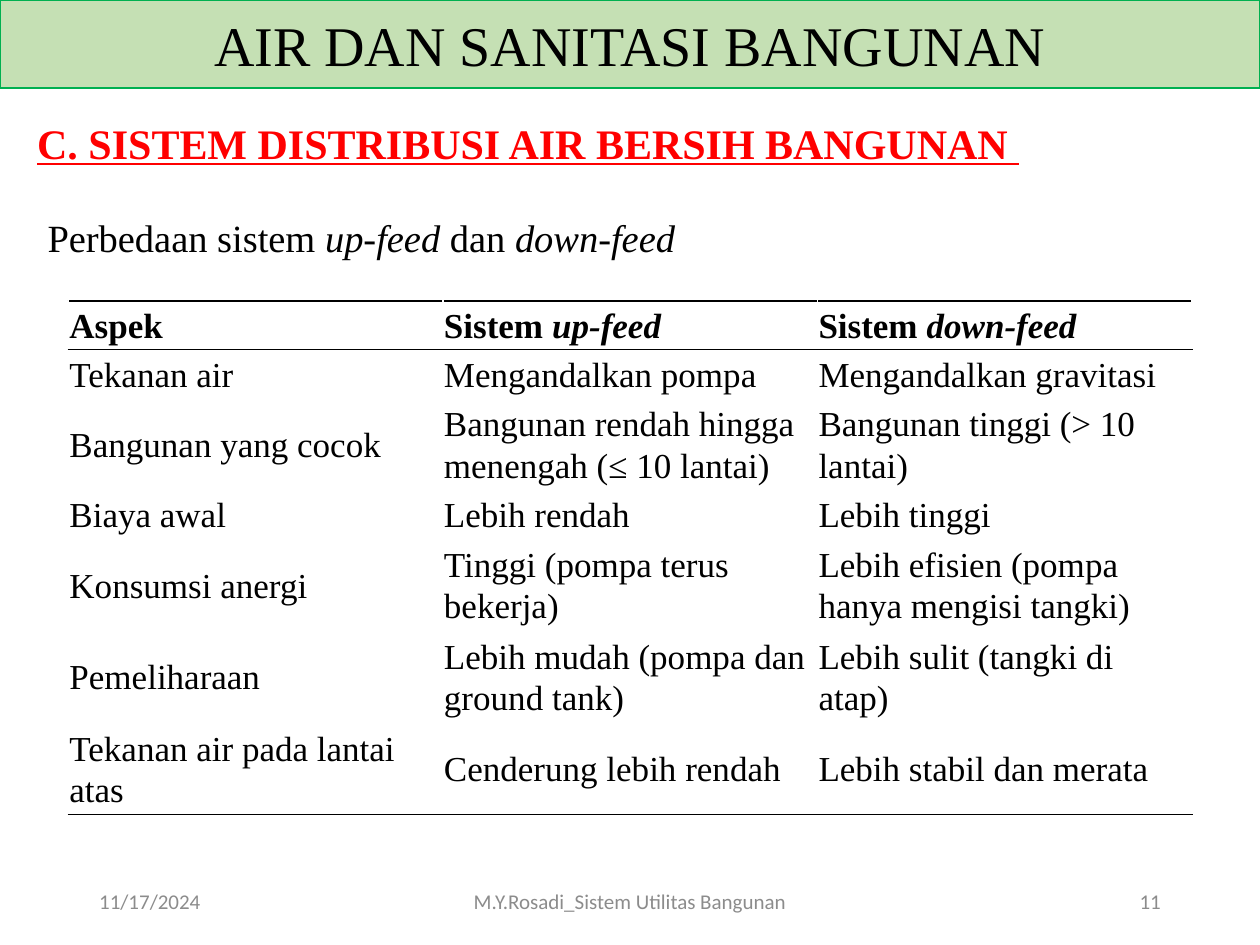
from lxml.etree import SubElement
from pptx import Presentation
from pptx.dml.color import RGBColor
from pptx.enum.shapes import MSO_SHAPE
from pptx.enum.text import MSO_ANCHOR, PP_ALIGN
from pptx.oxml.ns import qn
from pptx.util import Cm, Pt

COLORS = {
    "black": "000000",
    "white": "FFFFFF",
    "red": "FF0000",
    "banner": "C5E0B4",
    "banner_line": "00B050",
    "footer": "8C8C8C",
}
SERIF = "Times New Roman"
COLUMN_WIDTH = 7.55
LINE_ROW, WRAPPED_ROW = 0.98, 1.85

# Each cell is a list of runs; every second run is italic.
HEADER = [["Aspek"], ["Sistem ", "up-feed"], ["Sistem ", "down-feed"]]
ROWS = [
    (LINE_ROW, ["Tekanan air", "Mengandalkan pompa", "Mengandalkan gravitasi"]),
    (WRAPPED_ROW, ["Bangunan yang cocok",
                   "Bangunan rendah hingga menengah (≤ 10 lantai)",
                   "Bangunan tinggi (> 10 lantai)"]),
    (LINE_ROW, ["Biaya awal", "Lebih rendah", "Lebih tinggi"]),
    (WRAPPED_ROW, ["Konsumsi anergi", "Tinggi (pompa terus bekerja)",
                   "Lebih efisien (pompa hanya mengisi tangki)"]),
    (WRAPPED_ROW, ["Pemeliharaan", "Lebih mudah (pompa dan ground tank)",
                   "Lebih sulit (tangki di atap)"]),
    (WRAPPED_ROW, ["Tekanan air pada lantai atas", "Cenderung lebih rendah",
                   "Lebih stabil dan merata"]),
]


def rgb(name):
    return RGBColor.from_string(COLORS[name])


def add_runs(paragraph, texts, size, color="black", font=SERIF, bold=False, underline=False):
    """Add the texts as runs, with every second one in italics."""
    for index, text in enumerate(texts):
        run = paragraph.add_run()
        run.text = text
        run.font.name = font
        run.font.size = Pt(size)
        run.font.color.rgb = rgb(color)
        run.font.bold = bold
        run.font.underline = underline
        run.font.italic = index % 2 == 1


def add_banner(slide, width, text):
    shape = slide.shapes.add_shape(MSO_SHAPE.RECTANGLE, 0, 0, width, Cm(1.78))
    shape.shadow.inherit = False
    shape.fill.solid()
    shape.fill.fore_color.rgb = rgb("banner")
    shape.line.color.rgb = rgb("banner_line")
    shape.line.width = Pt(1)
    shape.text_frame.vertical_anchor = MSO_ANCHOR.MIDDLE
    paragraph = shape.text_frame.paragraphs[0]
    paragraph.alignment = PP_ALIGN.CENTER
    add_runs(paragraph, [text], 32)


def add_text(slide, box, texts, size, align=PP_ALIGN.LEFT, anchor=MSO_ANCHOR.TOP, **style):
    shape = slide.shapes.add_textbox(*(Cm(length) for length in box))
    frame = shape.text_frame
    frame.word_wrap = True
    frame.vertical_anchor = anchor
    paragraph = frame.paragraphs[0]
    paragraph.alignment = align
    add_runs(paragraph, texts, size, **style)


def set_borders(cell, top, bottom):
    """Draw 1 pt borders: white sides, and the given colours above and below."""
    properties = cell._tc.get_or_add_tcPr()
    sides = {"a:lnL": "white", "a:lnR": "white", "a:lnT": top, "a:lnB": bottom}
    for tag, color in sides.items():
        line = SubElement(properties, qn(tag), w=str(Pt(1)))
        fill = SubElement(line, qn("a:solidFill"))
        SubElement(fill, qn("a:srgbClr"), val=COLORS[color])


def fill_cell(cell, texts, bold, top, bottom):
    set_borders(cell, top, bottom)
    cell.fill.solid()
    cell.fill.fore_color.rgb = rgb("white")
    cell.vertical_anchor = MSO_ANCHOR.MIDDLE
    cell.margin_left = cell.margin_right = Cm(0.02)
    cell.margin_top = cell.margin_bottom = Cm(0.02)
    paragraph = cell.text_frame.paragraphs[0]
    paragraph.line_spacing = 1.07
    add_runs(paragraph, texts, 20, bold=bold)


def add_comparison_table(slide):
    rows = [(LINE_ROW, HEADER)]
    rows += [(height, [[text] for text in texts]) for height, texts in ROWS]
    total_height = sum(height for height, _ in rows)
    table = slide.shapes.add_table(
        len(rows), len(HEADER), Cm(1.38), Cm(6.07),
        Cm(COLUMN_WIDTH * len(HEADER)), Cm(total_height)).table
    table.first_row = table.horz_banding = False
    for column in table.columns:
        column.width = Cm(COLUMN_WIDTH)
    last = len(rows) - 1
    for index, (height, cells) in enumerate(rows):
        table.rows[index].height = Cm(height)
        top = "black" if index <= 1 else "white"
        bottom = "black" if index in (0, last) else "white"
        for column, texts in enumerate(cells):
            fill_cell(table.cell(index, column), texts, index == 0, top, bottom)


def add_footer(slide):
    parts = [
        (1.75, 5.72, "11/17/2024", PP_ALIGN.LEFT),
        (8.41, 8.58, "M.Y.Rosadi_Sistem Utilitas Bangunan", PP_ALIGN.CENTER),
        (17.93, 5.72, "11", PP_ALIGN.RIGHT),
    ]
    for left, width, text, align in parts:
        add_text(slide, (left, 17.65, width, 1.02), [text], 12, align,
                 MSO_ANCHOR.MIDDLE, color="footer", font="Calibri")


def main():
    presentation = Presentation()
    presentation.slide_width, presentation.slide_height = Cm(25.4), Cm(19.05)
    slide = presentation.slides.add_slide(presentation.slide_layouts[6])
    add_banner(slide, presentation.slide_width, "AIR DAN SANITASI BANGUNAN")
    add_text(slide, (0.5, 2.24, 22.65, 1.27),
             ["C. SISTEM DISTRIBUSI AIR BERSIH BANGUNAN "], 24,
             color="red", bold=True, underline=True)
    add_comparison_table(slide)
    add_text(slide, (0.71, 4.19, 24, 1.2),
             ["Perbedaan sistem ", "up-feed ", "dan ", "down-feed"], 22)
    add_footer(slide)
    presentation.save("out.pptx")


if __name__ == "__main__":
    main()
